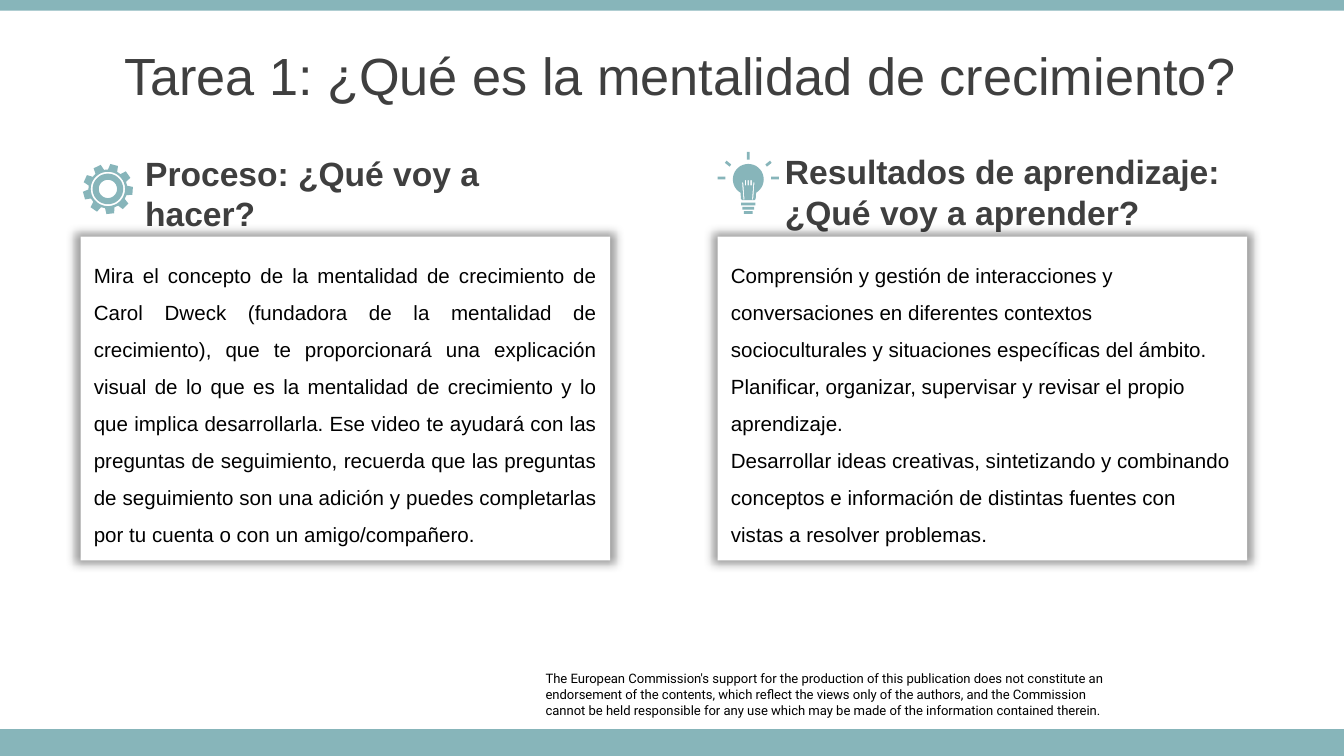
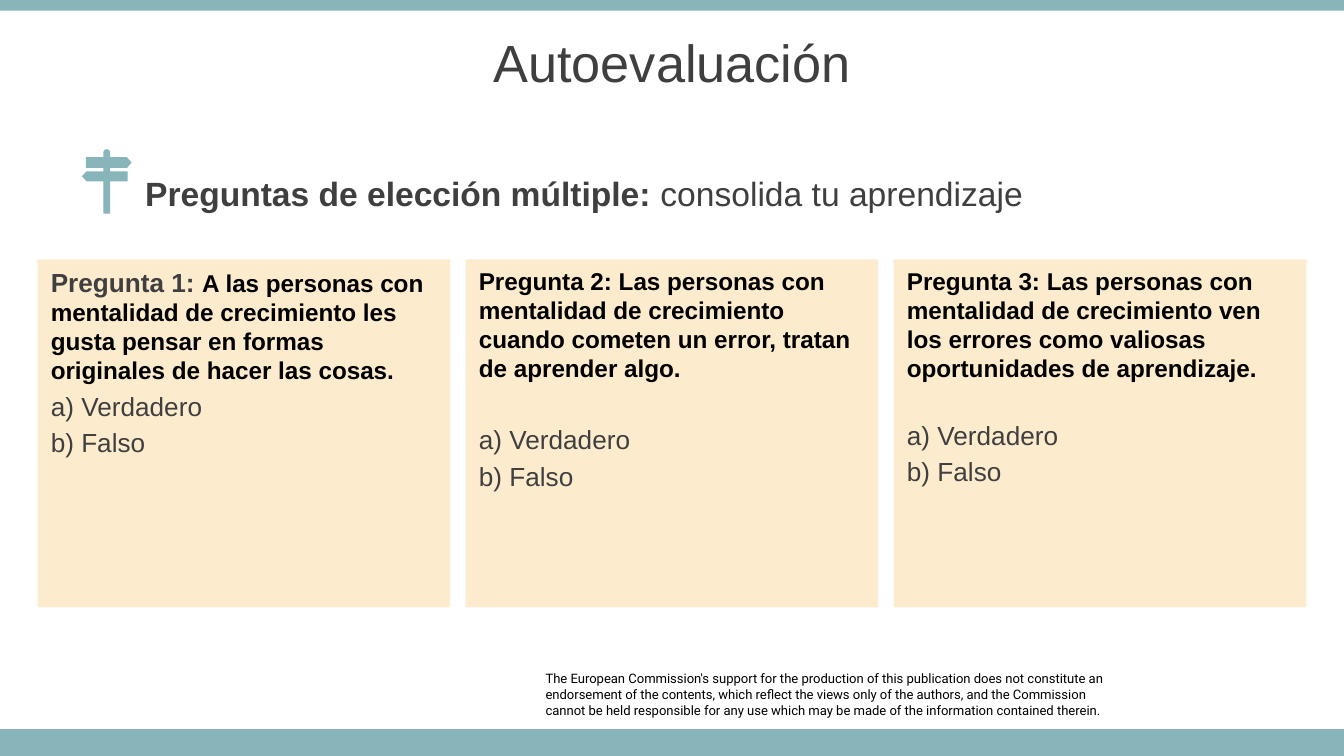
from math import cos, hypot, radians, sin

from lxml.etree import SubElement
from pptx import Presentation
from pptx.dml.color import RGBColor
from pptx.enum.shapes import MSO_SHAPE
from pptx.enum.text import MSO_ANCHOR, MSO_AUTO_SIZE, PP_ALIGN
from pptx.oxml.ns import qn
from pptx.util import Inches, Pt

WIDTH = 10
HEIGHT = WIDTH * 9 / 16
TEAL, CREAM, WHITE, BLACK, GREY = "87B5BA", "FCECCD", "FFFFFF", "000000", "3F3F3F"
COMPARISON_LAYOUT = 4

FOOTER = [
    "The European Commission's support for the production of this publication does not "
    "constitute an endorsement of the contents, which reflect the views only of the authors, "
    "and the Commission",
    "cannot be held responsible for any use which may be made of the information contained therein.",
]

TASK_TITLE = "Tarea 1: ¿Qué es la mentalidad de crecimiento?"
PROCESS_HEADING = "Proceso: ¿Qué voy a hacer?"
PROCESS = [
    "Mira el concepto de la mentalidad de crecimiento de Carol Dweck (fundadora de la "
    "mentalidad de crecimiento), que te proporcionará una explicación visual de lo que es la "
    "mentalidad de crecimiento y lo que implica desarrollarla. Ese video te ayudará con las "
    "preguntas de seguimiento, recuerda que las preguntas de seguimiento son una adición y "
    "puedes completarlas por tu cuenta o con un amigo/compañero.",
]
RESULTS_HEADING = "Resultados de aprendizaje: ¿Qué voy a aprender?"
RESULTS = [
    "Comprensión y gestión de interacciones y conversaciones en diferentes contextos "
    "socioculturales y situaciones específicas del ámbito.",
    "Planificar, organizar, supervisar y revisar el propio aprendizaje.",
    "Desarrollar ideas creativas, sintetizando y combinando conceptos e información de "
    "distintas fuentes con vistas a resolver problemas.",
]

QUIZ_TITLE = "Autoevaluación"
QUIZ_HEADING = ("Preguntas de elección múltiple: ", "consolida tu aprendizaje")
# label, label size, label colour, question, space before the first answer
QUESTIONS = [
    ("Pregunta 1: ", 14, GREY, "A las personas con mentalidad de crecimiento les gusta pensar "
     "en formas originales de hacer las cosas.", 2.8),
    ("Pregunta 2: ", 13, BLACK, "Las personas con mentalidad de crecimiento cuando cometen un "
     "error, tratan de aprender algo.", 22),
    ("Pregunta 3: ", 13, BLACK, "Las personas con mentalidad de crecimiento ven los errores "
     "como valiosas oportunidades de aprendizaje.", 19.5),
]
ANSWERS = ["a) Verdadero", "b) Falso"]
ANSWER_SPACE = 2.8


def color(hex_string):
    return RGBColor.from_string(hex_string)


def add_text(shape, text, size=18, fill=GREY, bold=False, font="Arial", align=PP_ALIGN.LEFT,
             line_spacing=1.0, before=0, same_line=False):
    """Append text as a new paragraph, or to the last one if same_line."""
    frame = shape.text_frame
    paragraph = frame.paragraphs[-1]
    if paragraph.runs and not same_line:
        paragraph = frame.add_paragraph()
    if not same_line:
        paragraph.alignment = align
        paragraph.line_spacing = line_spacing
        paragraph.space_before = Pt(before)
    run = paragraph.add_run()
    run.text = text
    run.font.size, run.font.name, run.font.bold = Pt(size), font, bold
    run.font.color.rgb = color(fill)


def place(shape, left, top, width, height):
    shape.left, shape.top = Inches(left), Inches(top)
    shape.width, shape.height = Inches(width), Inches(height)


def paint(shape, fill):
    shape.shadow.inherit = False
    shape.fill.solid()
    shape.fill.fore_color.rgb = color(fill)
    shape.line.fill.background()


def add_box(slide, left, top, width, height, fill, anchor=MSO_ANCHOR.TOP):
    box = slide.shapes.add_shape(MSO_SHAPE.RECTANGLE, 0, 0, 0, 0)
    place(box, left, top, width, height)
    paint(box, fill)
    box.text_frame.word_wrap = True
    box.text_frame.vertical_anchor = anchor
    return box


def add_glow_shadow(shape):
    effects = shape._element.spPr.find(qn("a:effectLst"))
    shadow = SubElement(effects, qn("a:outerShdw"), blurRad=str(Pt(5)), dist="0", dir="0",
                        sx="102000", sy="102000", algn="ctr", rotWithShape="0")
    tone = SubElement(shadow, qn("a:srgbClr"), val=BLACK)
    SubElement(tone, qn("a:alpha"), val="40000")


def fill_placeholder(slide, index, left, top, width, height):
    placeholder = slide.placeholders[index]
    place(placeholder, left, top, width, height)
    frame = placeholder.text_frame
    frame.auto_size = MSO_AUTO_SIZE.NONE
    frame.word_wrap = True
    frame.vertical_anchor = MSO_ANCHOR.MIDDLE
    return placeholder


def add_slide(presentation, title, title_left, title_top):
    """Add a slide with the shared bands, footer and title."""
    slide = presentation.slides.add_slide(presentation.slide_layouts[COMPARISON_LAYOUT])
    footer = slide.shapes.add_textbox(Inches(4.06), Inches(4.99), Inches(4.17), Inches(0.35))
    frame = footer.text_frame
    frame.word_wrap = True
    frame.margin_left = frame.margin_right = frame.margin_top = frame.margin_bottom = 0
    for line in FOOTER:
        add_text(footer, line, size=7, fill=BLACK, font="Roboto")
    add_box(slide, 0, HEIGHT - 0.2, WIDTH, 0.2, TEAL)
    add_box(slide, 0, 0, WIDTH, 0.08, TEAL)
    heading = fill_placeholder(slide, 0, title_left, title_top, WIDTH, 0.63)
    add_text(heading, title, size=28, align=PP_ALIGN.CENTER)
    return slide


def remove_empty_placeholders(slide):
    for placeholder in list(slide.placeholders):
        if not placeholder.text_frame.text:
            placeholder._element.getparent().remove(placeholder._element)


# Icon outlines are in thousandths of an inch from the icon's top left corner.
def polar(center, radius, degrees):
    angle = radians(degrees)
    return center[0] + radius * cos(angle), center[1] + radius * sin(angle)


def arc(center, radius, start=0, end=360, step=10):
    return [polar(center, radius, angle) for angle in range(start, end + 1, step)]


def strip(x1, y1, x2, y2, width):
    """Outline of a straight bar of the given width."""
    length = hypot(x2 - x1, y2 - y1)
    dx, dy = (y1 - y2) / length * width / 2, (x2 - x1) / length * width / 2
    return [(x1 + dx, y1 + dy), (x2 + dx, y2 + dy), (x2 - dx, y2 - dy), (x1 - dx, y1 - dy)]


def gear_outlines():
    center = (183, 186)
    rim = []
    for tooth in range(9):
        middle = tooth * 40 - 75.5
        rim += [polar(center, radius, middle + offset)
                for radius, offset in ((145, -14), (187, -9), (187, 9), (145, 14))]
    return [rim] + [arc(center, radius) for radius in (128, 114, 68)]


def bulb_outlines():
    middle = 228
    glass = arc((middle, 205), 115, 120, 420)
    glass += [(middle + x, y) for x, y in ((55, 350), (45, 360), (-45, 360), (-55, 350))]
    rays = [(0, 195, 58, 195), (398, 195, 456, 195), (middle, 0, middle, 58),
            (361, 102, 396, 74), (95, 102, 60, 74)]
    screw = [(middle - half, y, middle + half, y) for half, y in ((53, 388), (43, 420), (33, 452))]
    filament = [(middle + side * 42, 228, middle + side * 32, 355) for side in (-1, 1)]
    filament += [(middle + x, 210, middle + x, 250) for x in (-21, 0, 21)]
    return ([glass] + [strip(*bar, 20) for bar in rays + screw]
            + [strip(*wire, 9) for wire in filament])


def signpost_outlines():
    return [[(160, 20), (170, 5), (185, 0), (200, 5), (210, 20), (210, 60), (335, 60),
             (370, 100), (335, 140), (210, 140), (210, 165), (340, 165), (340, 240), (210, 240),
             (210, 480), (160, 480), (160, 240), (35, 240), (0, 202), (35, 165), (160, 165),
             (160, 140), (30, 140), (30, 60), (160, 60)]]


def add_icon(slide, left, top, outlines):
    first, *others = outlines
    builder = slide.shapes.build_freeform(*first[0], scale=Inches(1) / 1000)
    builder.add_line_segments(first[1:], close=True)
    for outline in others:
        builder.move_to(*outline[0])
        builder.add_line_segments(outline[1:], close=True)
    paint(builder.convert_to_shape(Inches(left), Inches(top)), TEAL)


def build_task_slide(presentation):
    slide = add_slide(presentation, TASK_TITLE, 0.06, 0.24)
    columns = [
        (0.6, PROCESS, PP_ALIGN.JUSTIFY, 1, PROCESS_HEADING, 0.98, 1.28),
        (5.34, RESULTS, PP_ALIGN.LEFT, 3, RESULTS_HEADING, 5.74, 1.27),
    ]
    for left, lines, align, index, heading_text, heading_left, heading_top in columns:
        box = add_box(slide, left, 1.76, 3.94, 2.41, WHITE, MSO_ANCHOR.MIDDLE)
        add_glow_shadow(box)
        for line in lines:
            add_text(box, line, size=11, fill=BLACK, align=align, line_spacing=1.5)
        heading = fill_placeholder(slide, index, heading_left, heading_top, 3.56, 0.31)
        add_text(heading, heading_text, bold=True)
    add_icon(slide, 0.62, 1.22, gear_outlines())
    add_icon(slide, 5.34, 1.13, bulb_outlines())
    remove_empty_placeholders(slide)


def build_quiz_slide(presentation):
    slide = add_slide(presentation, QUIZ_TITLE, 0, 0.14)
    heading = fill_placeholder(slide, 1, 0.98, 1.28, 7.27, 0.31)
    add_text(heading, QUIZ_HEADING[0], bold=True)
    add_text(heading, QUIZ_HEADING[1], same_line=True)
    add_icon(slide, 0.61, 1.11, signpost_outlines())

    margin, card_width = 0.28, 3.07
    count = len(QUESTIONS)
    pitch = (WIDTH - 2 * margin - card_width) / (count - 1)
    for column, (label, size, fill, question, first_space) in enumerate(QUESTIONS):
        card = add_box(slide, margin + column * pitch, 1.93, card_width, 2.59, CREAM)
        add_text(card, label, size=size, fill=fill, bold=True)
        add_text(card, question, size=13, fill=BLACK, bold=True, same_line=True)
        for answer, space in zip(ANSWERS, (first_space, ANSWER_SPACE)):
            add_text(card, answer, size=14, before=space)
    remove_empty_placeholders(slide)


def main():
    presentation = Presentation()
    presentation.slide_width, presentation.slide_height = Inches(WIDTH), Inches(HEIGHT)
    build_task_slide(presentation)
    build_quiz_slide(presentation)
    presentation.save("out.pptx")


if __name__ == "__main__":
    main()
